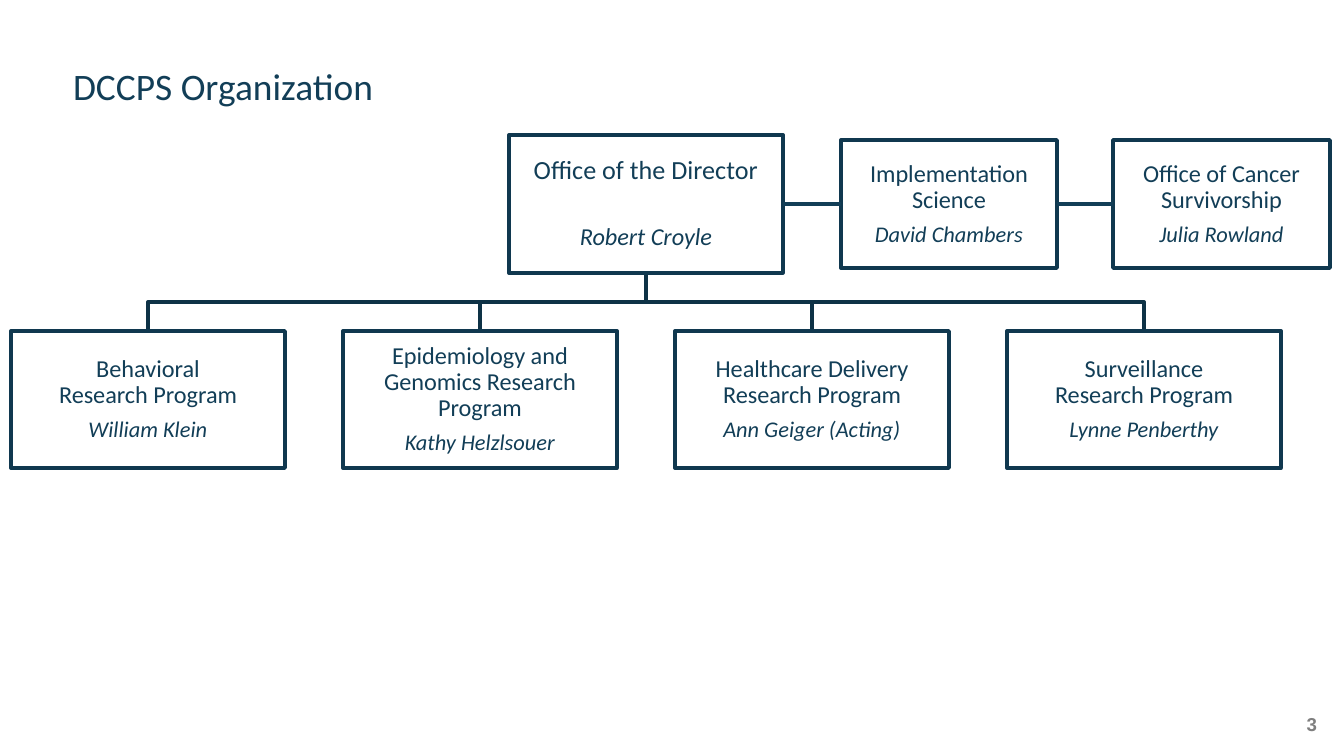
"""Build the DCCPS organization chart slide."""
import copy
from dataclasses import dataclass

import lxml.etree
import pptx
import pptx.dml.color
import pptx.enum.shapes
import pptx.enum.text
import pptx.oxml.ns
import pptx.shapes.autoshape
import pptx.slide
import pptx.text.text
import pptx.util

PX_PER_INCH = 134.4
Align = pptx.enum.text.PP_ALIGN
Anchor = pptx.enum.text.MSO_ANCHOR


@dataclass(frozen=True)
class Theme:
    font: str = "Calibri"
    number_font: str = "Arial"
    text: str = "123E57"
    border: str = "10384F"
    branch: str = "0E3246"
    muted: str = "7F7F7F"
    paper: str = "FFFFFF"
    title_size: int = 20
    number_size: int = 10
    border_width: float = 2
    link_width: float = 2.25
    line_spacing: float = 0.9
    gap: int = 5


@dataclass(frozen=True)
class Area:
    left: int
    top: int
    width: int
    height: int


@dataclass(frozen=True)
class Unit:
    area: Area
    name: str
    head: str
    name_size: int = 13
    head_size: int = 12
    name_gap: int = 5


THEME = Theme()
DIRECTOR = Unit(Area(509, 135, 274, 138), "Office of the Director", "Robert Croyle", 14, 13, 21)
STAFF = [
    Unit(Area(841, 140, 216, 128), "Implementation Science", "David Chambers"),
    Unit(Area(1113, 140, 217, 128), "Office of Cancer Survivorship", "Julia Rowland"),
]
PROGRAMS = [
    Unit(Area(11 + 332 * column, 331, 274, 137), name, head)
    for column, (name, head) in enumerate([
        ("Behavioral\nResearch Program", "William Klein"),
        ("Epidemiology and Genomics Research Program", "Kathy Helzlsouer"),
        ("Healthcare Delivery\nResearch Program", "Ann Geiger (Acting)"),
        ("Surveillance\nResearch Program", "Lynne Penberthy"),
    ])
]


def px(length: float) -> pptx.util.Emu:
    """Turn pixels into EMU."""
    return pptx.util.Emu(round(length * 914400 / PX_PER_INCH))


def place(area: Area) -> tuple:
    """Return the position and size of an area in EMU."""
    return px(area.left), px(area.top), px(area.width), px(area.height)


def rgb(value: str) -> pptx.dml.color.RGBColor:
    """Return a colour from its hexadecimal value."""
    return pptx.dml.color.RGBColor.from_string(value)


def set_line(line, colour: str, width: float) -> None:
    """Set the colour and width of a line."""
    line.color.rgb = rgb(colour)
    line.width = pptx.util.Pt(width)


def set_frame(frame: pptx.text.text.TextFrame, anchor: Anchor, margin: int = 0) -> None:
    """Set wrapping, anchor and equal margins of a text frame."""
    frame.word_wrap = True
    frame.vertical_anchor = anchor
    frame.margin_left = frame.margin_right = px(margin)
    frame.margin_top = frame.margin_bottom = px(margin)


def write(para, text: str, size: int, align: Align, colour: str = THEME.text,
          font: str = THEME.font, bold: bool = False, italic: bool = False) -> None:
    """Fill a paragraph and format its runs and line breaks."""
    para.text = text
    para.alignment = align
    para.line_spacing = THEME.line_spacing
    for span in para.runs:
        span.font.name = font
        span.font.size = pptx.util.Pt(size)
        span.font.color.rgb = rgb(colour)
        span.font.bold = bold
        span.font.italic = italic
    for line_break in para._p.findall(pptx.oxml.ns.qn("a:br")):
        line_break.append(copy.deepcopy(para.runs[0]._r.rPr))


def draw_unit(page: pptx.slide.Slide, unit: Unit) -> pptx.shapes.autoshape.Shape:
    """Draw a box with the unit's name above its head."""
    box = page.shapes.add_shape(pptx.enum.shapes.MSO_SHAPE.RECTANGLE, *place(unit.area))
    box.shadow.inherit = False
    box.fill.solid()
    box.fill.fore_color.rgb = rgb(THEME.paper)
    set_line(box.line, THEME.border, THEME.border_width)
    set_frame(box.text_frame, Anchor.MIDDLE, 1)
    name = box.text_frame.paragraphs[0]
    write(name, unit.name, unit.name_size, Align.CENTER)
    name.space_after = pptx.util.Pt(unit.name_gap)
    head = box.text_frame.add_paragraph()
    write(head, unit.head, unit.head_size, Align.CENTER, italic=True)
    head.space_after = pptx.util.Pt(THEME.gap)
    return box


def draw_branch(page: pptx.slide.Slide, parent: Area, child: Area) -> None:
    """Draw a stepped line from the parent's bottom to the child's top."""
    start, end = parent.left + parent.width // 2, child.left + child.width // 2
    bottom = parent.top + parent.height
    middle = (bottom + child.top) // 2
    builder = page.shapes.build_freeform(px(start), px(bottom))
    points = [(start, middle), (end, middle), (end, child.top)]
    builder.add_line_segments([(px(x), px(y)) for x, y in points], close=False)
    branch = builder.convert_to_shape()
    branch.shadow.inherit = False
    branch.fill.background()
    set_line(branch.line, THEME.branch, THEME.border_width)


def draw_link(page: pptx.slide.Slide, left_box, right_box) -> None:
    """Join the facing sides of two boxes."""
    link = page.shapes.add_connector(pptx.enum.shapes.MSO_CONNECTOR.STRAIGHT, 0, 0, 0, 0)
    link.begin_connect(left_box, 3)
    link.end_connect(right_box, 1)
    set_line(link.line, THEME.text, THEME.link_width)
    lxml.etree.SubElement(link._element.spPr, pptx.oxml.ns.qn("a:effectLst"))


def draw_label(page: pptx.slide.Slide, area: Area, text: str, size: int,
               align: Align, anchor: Anchor, **style) -> None:
    """Draw a single-paragraph text box."""
    box = page.shapes.add_textbox(*place(area))
    set_frame(box.text_frame, anchor)
    write(box.text_frame.paragraphs[0], text, size, align, **style)


def main() -> None:
    """Build and save the deck."""
    deck = pptx.Presentation()
    deck.slide_width, deck.slide_height = px(1344), px(756)
    page = deck.slides.add_slide(deck.slide_layouts[6])
    draw_label(page, Area(1271, 715, 46, 27), "3", THEME.number_size, Align.RIGHT, Anchor.TOP,
               colour=THEME.muted, font=THEME.number_font, bold=True)
    for program in reversed(PROGRAMS):
        draw_branch(page, DIRECTOR.area, program.area)
    director = draw_unit(page, DIRECTOR)
    for program in PROGRAMS:
        draw_unit(page, program)
    row = [director] + [draw_unit(page, unit) for unit in STAFF]
    draw_label(page, Area(73, 62, 1200, 47), "DCCPS Organization", THEME.title_size,
               Align.LEFT, Anchor.BOTTOM)
    for left_box, right_box in zip(row, row[1:]):
        draw_link(page, left_box, right_box)
    deck.save("out.pptx")


if __name__ == "__main__":
    main()
